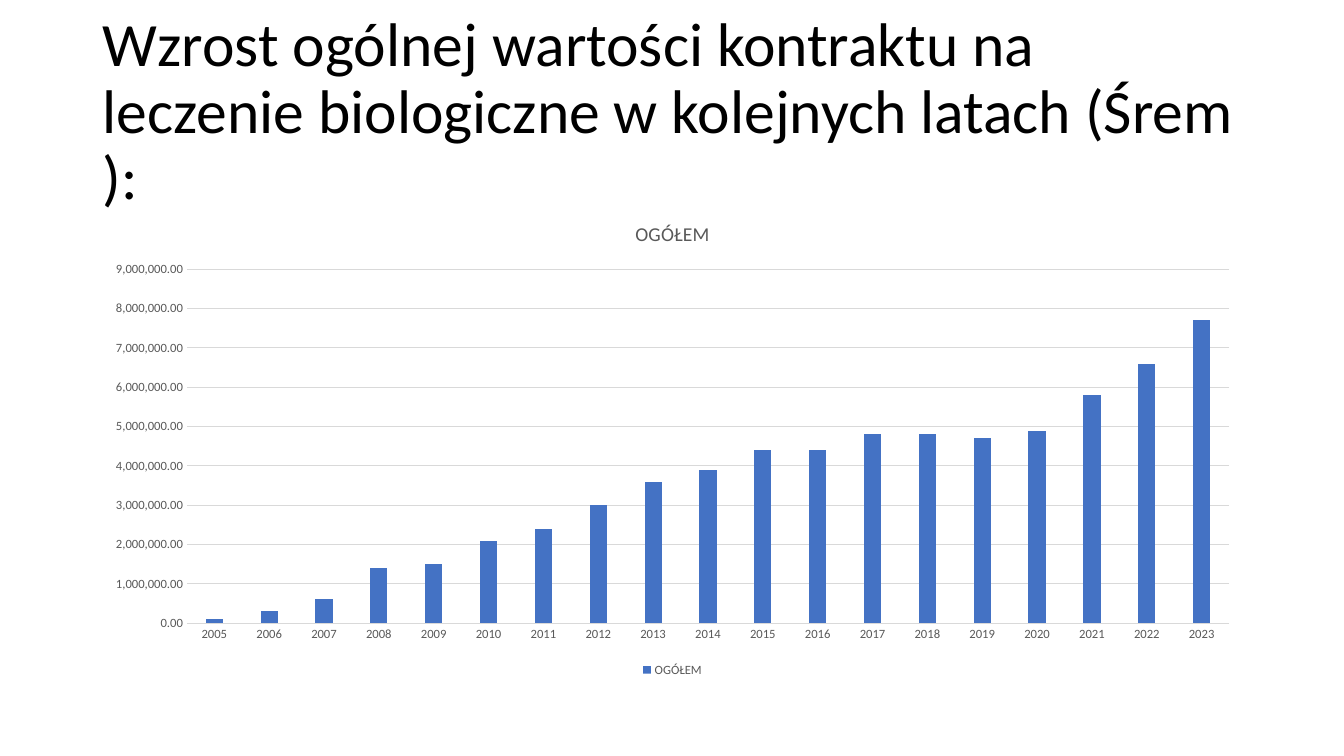
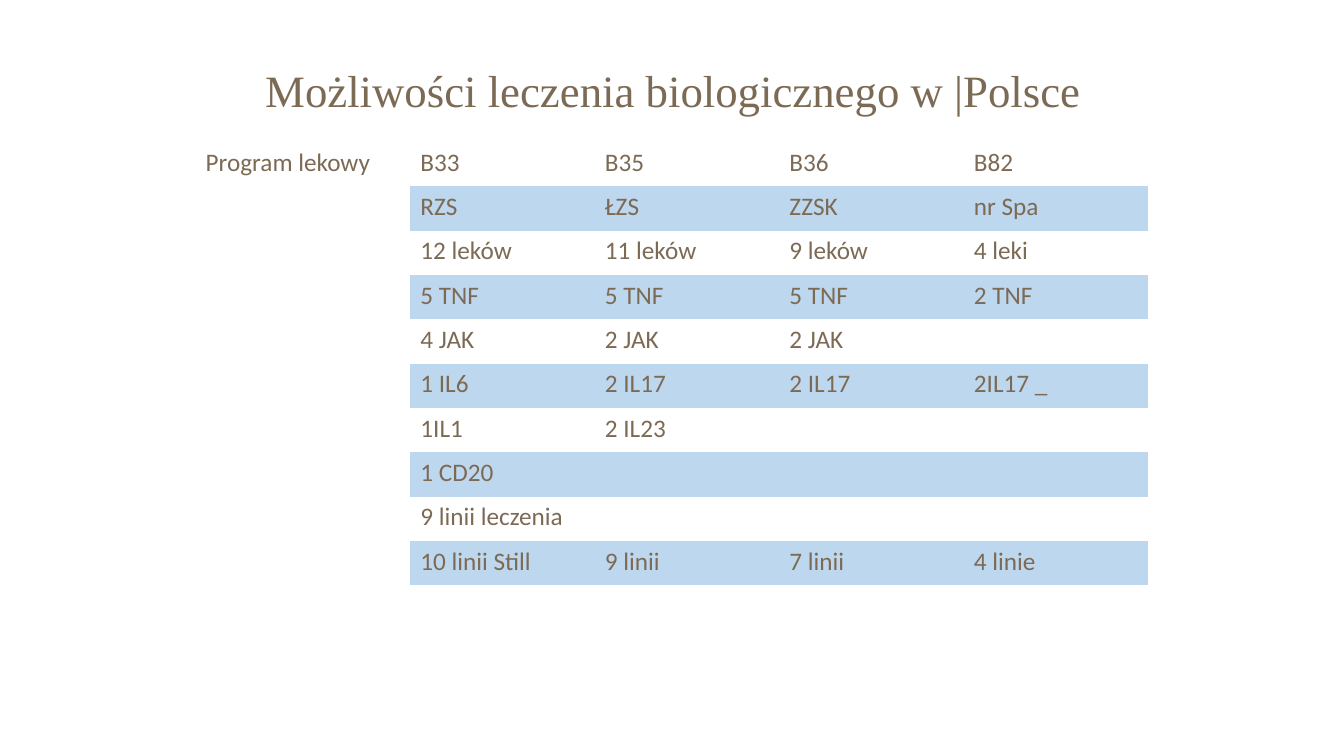
"""Build two slides on biological treatment: contract growth and drug programmes."""
from pptx import Presentation
from pptx.chart.data import CategoryChartData
from pptx.dml.color import RGBColor
from pptx.enum import chart as ch, text
from pptx.util import Inches, Pt

BLACK, GREY, GRID, BLUE = "000000", "595959", "D9D9D9", "4472C4"
BROWN, BAND = "7C6A55", "BDD7EE"
BODY, SERIF = "Calibri", "Times New Roman"
NO_STYLE = "{2D5ABB26-0587-4C30-8999-92F81FD0307C}"


def style(font, size, color, name=BODY):
    font.size, font.name, font.bold = Pt(size), name, False
    font.color.rgb = RGBColor.from_string(color)


def add_titled_slide(wording, box, anchor, spacing, size, color, name):
    slide = prs.slides.add_slide(prs.slide_layouts[5])
    title = slide.shapes.title
    title.left, title.top, title.width, title.height = map(Inches, box)
    frame = title.text_frame
    frame.text = wording
    frame.word_wrap = True
    frame.auto_size = text.MSO_AUTO_SIZE.NONE
    frame.vertical_anchor = anchor
    heading = frame.paragraphs[0]
    heading.alignment = text.PP_ALIGN.LEFT
    heading.line_spacing = spacing
    style(heading.runs[0].font, size, color, name)
    return slide, heading


prs = Presentation()
prs.slide_width, prs.slide_height = Inches(13.33), Inches(7.5)

growth, _ = add_titled_slide(
    "Wzrost ogólnej wartości kontraktu na leczenie biologiczne w kolejnych latach (Śrem ):",
    (0.92, 0.4, 11.5, 1.45), text.MSO_ANCHOR.MIDDLE, 0.9, 44, BLACK, BODY)

millions = [0.1, 0.3, 0.6, 1.4, 1.5, 2.1, 2.4, 3.0, 3.6, 3.9,
            4.4, 4.4, 4.8, 4.8, 4.7, 4.9, 5.8, 6.6, 7.7]
contract = CategoryChartData(number_format="#,##0.00")
contract.categories = [str(2005 + i) for i in range(len(millions))]
contract.add_series("OGÓŁEM", [round(value * 1_000_000) for value in millions])
chart = growth.shapes.add_chart(
    ch.XL_CHART_TYPE.COLUMN_CLUSTERED, Inches(0.92), Inches(2),
    Inches(11.5), Inches(4.76), contract).chart
style(chart.font, 10, BLACK)

chart.has_title = True
chart.chart_title.text_frame.text = "OGÓŁEM"
style(chart.chart_title.text_frame.paragraphs[0].runs[0].font, 14, GREY)
chart.chart_title.include_in_layout = False

chart.has_legend = True
chart.legend.position = ch.XL_LEGEND_POSITION.BOTTOM
chart.legend.include_in_layout = False
style(chart.legend.font, 9, GREY)

columns = chart.plots[0]
columns.gap_width, columns.overlap = 219, -27
columns.vary_by_categories = False
bars = columns.series[0].format.fill
bars.solid()
bars.fore_color.rgb = RGBColor.from_string(BLUE)

years, amounts = chart.category_axis, chart.value_axis
for axis in (years, amounts):
    axis.major_tick_mark = axis.minor_tick_mark = ch.XL_TICK_MARK.NONE
    style(axis.tick_labels.font, 9, GREY)
amounts.minimum_scale, amounts.maximum_scale = 0, 9_000_000
amounts.major_unit = 1_000_000
amounts.tick_labels.number_format = "#,##0.00"
amounts.tick_labels.number_format_is_linked = False
amounts.format.line.fill.background()
for line in (years.format.line, amounts.major_gridlines.format.line):
    line.width = Pt(0.75)
    line.color.rgb = RGBColor.from_string(GRID)

options, options_heading = add_titled_slide(
    "Możliwości leczenia biologicznego w |Polsce",
    (2.53, 0.52, 8.88, 0.69), text.MSO_ANCHOR.TOP, 1.1, 32, BROWN, SERIF)
options_heading.space_before = Pt(4)

programmes = [
    ["Program lekowy", "B33", "B35", "B36", "B82"],
    ["", "RZS", "ŁZS", "ZZSK", "nr Spa"],
    ["", "12 leków", "11 leków", "9 leków", "4 leki"],
    ["", "5 TNF", "5 TNF", "5 TNF", "2 TNF"],
    ["", "4 JAK", "2 JAK", "2 JAK", ""],
    ["", "1 IL6", "2 IL17", "2 IL17", "2IL17 _"],
    ["", "1IL1", "2 IL23", "", ""],
    ["", "1 CD20", "", "", ""],
    ["", "9 linii leczenia", "", "", ""],
    ["", "10 linii Still", "9 linii", "7 linii", "4 linie"],
    [""] * 5,
]
widths = [2.13] + [1.83] * 4
row_height = 0.44
table = options.shapes.add_table(
    len(programmes), len(widths), Inches(1.94), Inches(1.41),
    Inches(sum(widths)), Inches(row_height * len(programmes))).table
table.first_row = table.horz_banding = False
table._tbl.tblPr[0].text = NO_STYLE
for column, width in zip(table.columns, widths):
    column.width = Inches(width)
for r, entries in enumerate(programmes):
    table.rows[r].height = Inches(row_height)
    for c, entry in enumerate(entries):
        cell = table.cell(r, c)
        cell.text = entry
        style(cell.text_frame.paragraphs[0].font, 18, BROWN)
        for run in cell.text_frame.paragraphs[0].runs:
            style(run.font, 18, BROWN)
        if r % 2 and c:
            cell.fill.solid()
            cell.fill.fore_color.rgb = RGBColor.from_string(BAND)
        else:
            cell.fill.background()

prs.save("out.pptx")
